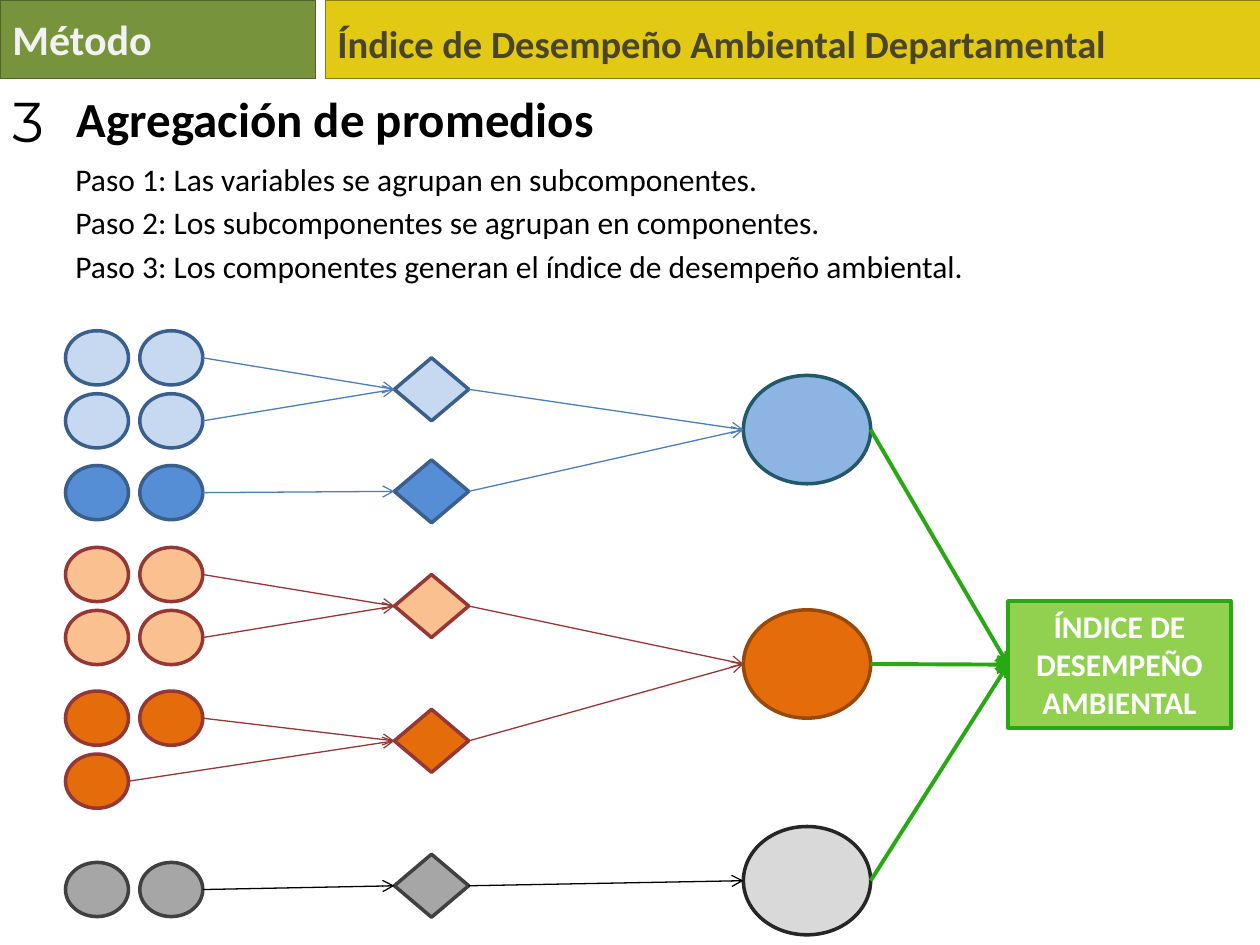
from typing import NamedTuple

from lxml.etree import SubElement
from pptx import Presentation
from pptx.dml.color import RGBColor
from pptx.enum.shapes import MSO_CONNECTOR, MSO_SHAPE
from pptx.enum.text import MSO_ANCHOR, MSO_AUTO_SIZE, PP_ALIGN
from pptx.oxml.ns import qn
from pptx.util import Inches, Pt

BLACK = RGBColor(0x00, 0x00, 0x00)
WHITE = RGBColor(0xFF, 0xFF, 0xFF)
OFF_WHITE = RGBColor(0xF2, 0xF2, 0xF2)
OLIVE = RGBColor(0x77, 0x93, 0x3C)
DARK_OLIVE = RGBColor(0x4F, 0x62, 0x28)
YELLOW = RGBColor(0xE2, 0xC9, 0x14)
DARK_YELLOW = RGBColor(0x8A, 0x7B, 0x0C)
BROWN = RGBColor(0x4A, 0x45, 0x2A)
PALE_BLUE = RGBColor(0xC6, 0xD9, 0xF1)
LIGHT_BLUE = RGBColor(0x8E, 0xB4, 0xE3)
BLUE = RGBColor(0x55, 0x8E, 0xD5)
NAVY = RGBColor(0x3A, 0x5F, 0x8C)
ARROW_BLUE = RGBColor(0x4B, 0x7E, 0xBC)
TEAL = RGBColor(0x21, 0x59, 0x68)
PEACH = RGBColor(0xFA, 0xC0, 0x90)
ORANGE = RGBColor(0xE4, 0x6C, 0x0A)
RUST = RGBColor(0x98, 0x48, 0x07)
RED = RGBColor(0x95, 0x37, 0x35)
PALE_GRAY = RGBColor(0xD9, 0xD9, 0xD9)
GRAY = RGBColor(0xA6, 0xA6, 0xA6)
DARK_GRAY = RGBColor(0x40, 0x40, 0x40)
CHARCOAL = RGBColor(0x26, 0x26, 0x26)
LIME = RGBColor(0x92, 0xD0, 0x50)
GREEN = RGBColor(0x28, 0xA9, 0x13)

VARIABLE_LEFTS = (0.52, 1.11)
VARIABLE_W, VARIABLE_H = 0.5, 0.43
DIAMOND_LEFT, DIAMOND_W, DIAMOND_H = 3.13, 0.59, 0.5
COMPONENT_LEFT, COMPONENT_W, COMPONENT_H = 5.9, 1.01, 0.86
INDEX_LEFT, INDEX_TOP, INDEX_W, INDEX_H = 8, 4.77, 1.77, 1.01


class VariableRow(NamedTuple):
    y: float  # centre of the row
    count: int = 2


class Subcomponent(NamedTuple):
    y: float
    fill: RGBColor
    rows: tuple[VariableRow, ...]


class Component(NamedTuple):
    y: float
    fill: RGBColor
    outline: RGBColor
    part_outline: RGBColor
    arrow: RGBColor
    subcomponents: tuple[Subcomponent, ...]


COMPONENTS = (
    Component(3.41, LIGHT_BLUE, TEAL, NAVY, ARROW_BLUE, (
        Subcomponent(3.09, PALE_BLUE, (VariableRow(2.84), VariableRow(3.34))),
        Subcomponent(3.9, BLUE, (VariableRow(3.91),)),
    )),
    Component(5.27, ORANGE, RUST, RED, RED, (
        Subcomponent(4.81, PEACH, (VariableRow(4.56), VariableRow(5.06))),
        Subcomponent(5.88, ORANGE, (VariableRow(5.7), VariableRow(6.2, 1))),
    )),
    Component(6.99, PALE_GRAY, CHARCOAL, DARK_GRAY, BLACK, (
        Subcomponent(7.03, GRAY, (VariableRow(7.06),)),
    )),
)


def add_node(slide, kind: MSO_SHAPE, left: float, y: float, width: float, height: float,
             fill: RGBColor, outline: RGBColor, weight: float = 2):
    """Draw an outlined shape whose vertical centre is y."""
    node = slide.shapes.add_shape(kind, Inches(left), Inches(y - height / 2),
                                  Inches(width), Inches(height))
    node.shadow.inherit = False
    node.fill.solid()
    node.fill.fore_color.rgb = fill
    node.line.color.rgb = outline
    node.line.width = Pt(weight)
    return node


def add_arrow(slide, x1: float, y1: float, x2: float, y2: float,
              color: RGBColor, weight: float = 0.75) -> None:
    arrow = slide.shapes.add_connector(MSO_CONNECTOR.STRAIGHT, Inches(x1), Inches(y1),
                                       Inches(x2), Inches(y2))
    arrow.line.color.rgb = color
    arrow.line.width = Pt(weight)
    SubElement(arrow.line._get_or_add_ln(), qn("a:tailEnd"), type="arrow")
    SubElement(arrow._element.spPr, qn("a:effectLst"))


def write(shape, lines: tuple[str, ...], size: float, color: RGBColor, bold: bool = False,
          font: str = "Calibri", align: PP_ALIGN = PP_ALIGN.LEFT, before: float = 0,
          anchor: MSO_ANCHOR = MSO_ANCHOR.TOP, wrap: bool = True) -> None:
    frame = shape.text_frame
    frame.text = "\n".join(lines)
    frame.word_wrap = wrap
    frame.auto_size = MSO_AUTO_SIZE.NONE
    frame.vertical_anchor = anchor
    for paragraph in frame.paragraphs:
        paragraph.alignment = align
        paragraph.space_before = Pt(before)
        paragraph.font.name = font
        paragraph.font.size = Pt(size)
        paragraph.font.bold = bold
        paragraph.font.color.rgb = color


def add_text(slide, left: float, top: float, width: float, height: float,
             lines: tuple[str, ...], size: float, color: RGBColor, **style) -> None:
    box = slide.shapes.add_textbox(Inches(left), Inches(top), Inches(width), Inches(height))
    write(box, lines, size, color, **style)


def add_component(slide, component: Component) -> None:
    """Draw a component with its subcomponents, variables and arrows."""
    add_node(slide, MSO_SHAPE.OVAL, COMPONENT_LEFT, component.y, COMPONENT_W, COMPONENT_H,
             component.fill, component.outline)
    for sub in component.subcomponents:
        add_node(slide, MSO_SHAPE.DIAMOND, DIAMOND_LEFT, sub.y, DIAMOND_W, DIAMOND_H,
                 sub.fill, component.part_outline)
        add_arrow(slide, DIAMOND_LEFT + DIAMOND_W, sub.y, COMPONENT_LEFT, component.y,
                  component.arrow)
        for row in sub.rows:
            lefts = VARIABLE_LEFTS[:row.count]
            for left in lefts:
                add_node(slide, MSO_SHAPE.OVAL, left, row.y, VARIABLE_W, VARIABLE_H,
                         sub.fill, component.part_outline)
            add_arrow(slide, lefts[-1] + VARIABLE_W, row.y, DIAMOND_LEFT, sub.y,
                      component.arrow)


def main() -> None:
    presentation = Presentation()
    presentation.slide_width, presentation.slide_height = Inches(10), Inches(7.5)
    slide = presentation.slides.add_slide(presentation.slide_layouts[5])

    title = slide.shapes.title
    title.left, title.top = Inches(0.51), Inches(0.77)
    title.width, title.height = Inches(6.23), Inches(0.33)
    write(title, ("Agregación de promedios",), 28, BLACK, bold=True, anchor=MSO_ANCHOR.MIDDLE)
    add_text(slide, 0, 0.64, 0.43, 0.64, ("3",), 32, BLACK, font="Montserrat")
    add_text(slide, 0.5, 1.22, 7.89, 1.17, (
        "Paso 1: Las variables se agrupan en subcomponentes.",
        "Paso 2: Los subcomponentes se agrupan en componentes.",
        "Paso 3: Los componentes generan el índice de desempeño ambiental.",
    ), 18, BLACK, before=3.2)

    for component in COMPONENTS:
        add_component(slide, component)
    index_y = INDEX_TOP + INDEX_H / 2
    index = add_node(slide, MSO_SHAPE.RECTANGLE, INDEX_LEFT, index_y, INDEX_W, INDEX_H,
                     LIME, GREEN)
    write(index, ("ÍNDICE DE", "DESEMPEÑO", "AMBIENTAL"), 18, WHITE, bold=True,
          align=PP_ALIGN.CENTER)
    for component in COMPONENTS:
        add_arrow(slide, COMPONENT_LEFT + COMPONENT_W, component.y, INDEX_LEFT, index_y,
                  GREEN, 2.25)

    add_node(slide, MSO_SHAPE.RECTANGLE, 0, 0.31, 2.5, 0.62, OLIVE, DARK_OLIVE, 0.25)
    add_text(slide, 0, 0.06, 1.32, 0.5, ("Método",), 24, OFF_WHITE, bold=True, wrap=False)
    add_node(slide, MSO_SHAPE.RECTANGLE, 2.58, 0.31, 7.42, 0.62, YELLOW, DARK_YELLOW, 0.25)
    add_text(slide, 2.58, 0.11, 6.37, 0.47, ("Índice de Desempeño Ambiental Departamental",),
             22, BROWN, bold=True, wrap=False)

    presentation.save("out.pptx")


if __name__ == "__main__":
    main()
